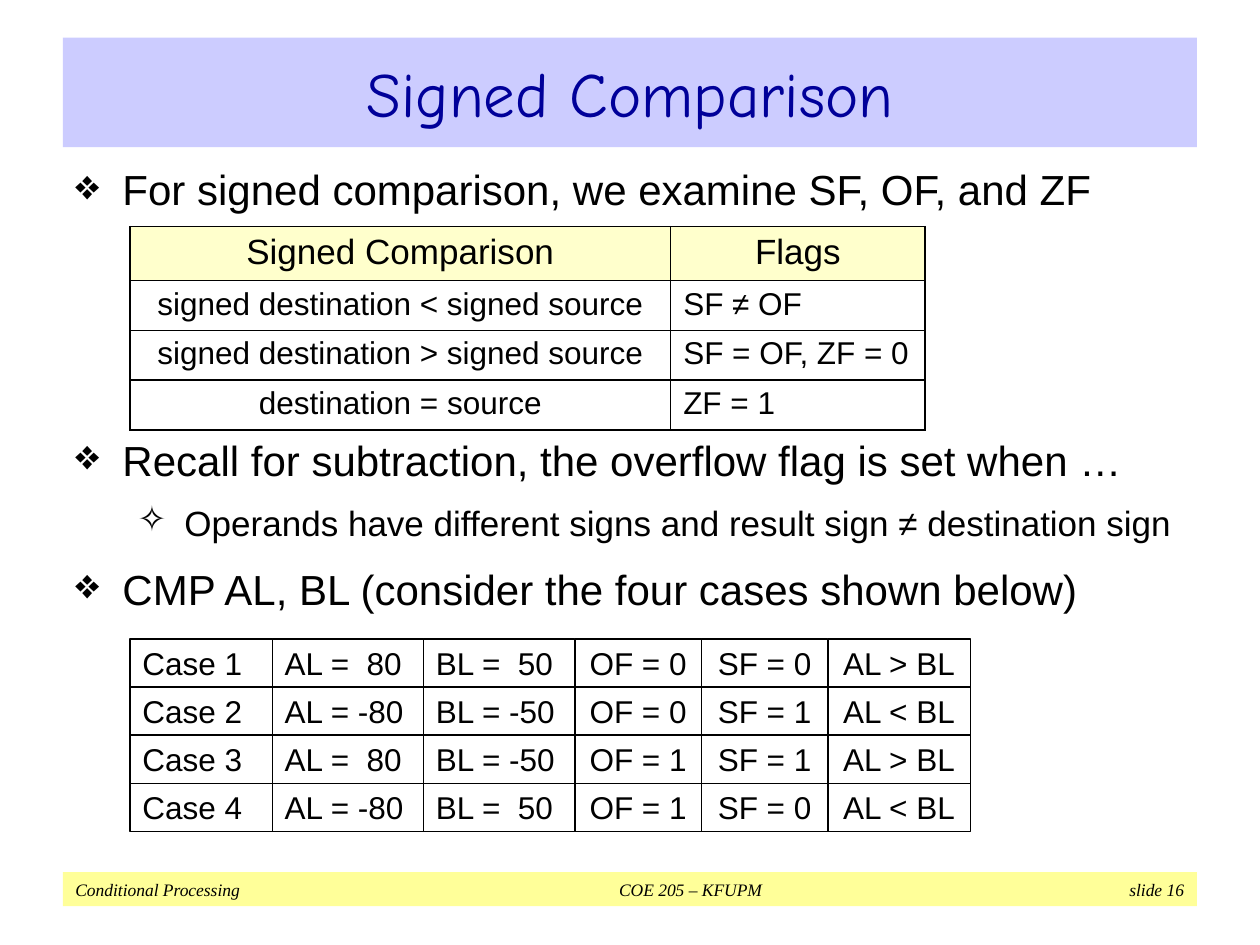
from lxml import etree
from pptx import Presentation
from pptx.dml.color import RGBColor
from pptx.enum.shapes import MSO_SHAPE
from pptx.enum.text import MSO_ANCHOR, PP_ALIGN
from pptx.oxml.ns import qn
from pptx.util import Cm, Pt

RECT = MSO_SHAPE.RECTANGLE
MIDDLE = MSO_ANCHOR.MIDDLE
LEFT, CENTER = PP_ALIGN.LEFT, PP_ALIGN.CENTER

THEME = {
    "ink": RGBColor(0, 0, 0),
    "band": RGBColor(0xCC, 0xCC, 0xFF),
    "foot": RGBColor(0xFF, 0xFF, 0x99),
    "head": RGBColor(0xFF, 0xFF, 0xCC),
    "title": {"name": "Comic Neue", "size": Pt(36)},
    "navy": RGBColor(0, 0, 0x99),
    "point": {"name": "Arial", "size": Pt(24)},
    "sub": {"name": "Arial", "size": Pt(20)},
    "cell": {"name": "Arial", "size": Pt(18)},
    "note": {"name": "Times New Roman", "size": Pt(10), "italic": True},
}


def write(para, text, style, align=LEFT, color="ink"):
    run = para.add_run()
    run.text = text
    para.alignment = align
    for key, value in THEME[style].items():
        setattr(run.font, key, value)
    run.font.color.rgb = THEME[color]


def add_box(left, top, width, height, fill=None):
    box = slide.shapes.add_shape(RECT, Cm(left), Cm(top), Cm(width), Cm(height))
    box.shadow.inherit = False
    if fill:
        box.fill.solid()
        box.fill.fore_color.rgb = THEME[fill]
        box.line.fill.background()
    else:
        box.fill.background()
        box.line.color.rgb = THEME["ink"]
        box.line.width = Pt(0.75)
    frame = box.text_frame
    frame.vertical_anchor = MIDDLE
    frame.margin_top = frame.margin_bottom = 0
    return frame.paragraphs[0]


deck = Presentation()
deck.slide_width, deck.slide_height = Cm(25.4), Cm(19.05)
slide = deck.slides.add_slide(deck.slide_layouts[6])

# Footer with a centre and a right tab stop
para = add_box(1.27, 17.58, 22.86, 0.69, "foot")
write(para, "Conditional Processing\tCOE 205 – KFUPM\tslide 16", "note")
tabs = etree.SubElement(para._p.get_or_add_pPr(), qn("a:tabLst"))
for pos, algn in ((12.4, "ctr"), (22.35, "r")):
    etree.SubElement(tabs, qn("a:tab"), pos=str(Cm(pos)), algn=algn)

# Title band
para = add_box(1.27, 0.76, 22.86, 2.21, "band")
write(para, "Signed Comparison", "title", CENTER, "navy")

# Bullet points: text, style, mark, left margin, hanging indent, space before
points = [
    ("For signed comparison, we examine SF, OF, and ZF", "point", "❖", 0.95, 0.95, 0),
    ("Recall for subtraction, the overflow flag is set when …",
     "point", "❖", 0.95, 0.95, 126),
    ("Operands have different signs and result sign ≠ destination sign",
     "sub", "✧", 2.2, 0.95, 9.5),
    ("CMP AL, BL (consider the four cases shown below)", "point", "❖", 0.95, 0.95, 11),
]
body = slide.shapes.add_textbox(Cm(1.27), Cm(3.18), Cm(22.86), Cm(14.27)).text_frame
body.word_wrap = True
for i, (text, style, mark, margin, hang, gap) in enumerate(points):
    para = body.add_paragraph() if i else body.paragraphs[0]
    write(para, text, style)
    para.space_before = Pt(gap)
    para.level = 1 if style == "sub" else 0
    props = para._p.get_or_add_pPr()
    props.set("marL", str(Cm(margin)))
    props.set("indent", str(-Cm(hang)))
    etree.SubElement(props, qn("a:buChar"), char=mark)

# Table of flags
flags = [
    ("Signed Comparison", "Flags"),
    ("signed destination < signed source", "SF ≠ OF"),
    ("signed destination > signed source", "SF = OF, ZF = 0"),
    ("destination = source", "ZF = 1"),
]
table = slide.shapes.add_table(4, 2, Cm(2.62), Cm(4.57), Cm(16.03), Cm(3.96)).table
table.first_row = table.horz_banding = False
for col, width in zip(table.columns, (10.9, 5.13)):
    col.width = Cm(width)
for r, row in enumerate(flags):
    table.rows[r].height = Cm(0.97 if r else 1.05)
    for c, text in enumerate(row):
        cell = table.cell(r, c)
        cell.margin_top = cell.margin_bottom = Cm(0.12)
        align = LEFT if r and c else CENTER
        write(cell.text_frame.paragraphs[0], text, "cell" if r else "sub", align)
        props = cell._tc.get_or_add_tcPr()
        for side in ("a:lnL", "a:lnR", "a:lnT", "a:lnB"):
            line = etree.SubElement(props, qn(side), w=str(Pt(1)))
            solid = etree.SubElement(line, qn("a:solidFill"))
            etree.SubElement(solid, qn("a:srgbClr"), val=str(THEME["ink"]))
        if r:
            cell.fill.background()
        else:
            cell.fill.solid()
            cell.fill.fore_color.rgb = THEME["head"]

# Grid of the four cases
cases = [
    ("Case 1", "AL =  80", "BL =  50", "OF = 0", "SF = 0", "AL > BL"),
    ("Case 2", "AL = -80", "BL = -50", "OF = 0", "SF = 1", "AL < BL"),
    ("Case 3", "AL =  80", "BL = -50", "OF = 1", "SF = 1", "AL > BL"),
    ("Case 4", "AL = -80", "BL =  50", "OF = 1", "SF = 0", "AL < BL"),
]
widths = (2.87, 3.05, 3.05, 2.55, 2.55, 2.87)
high = 0.97
for r, row in enumerate(cases):
    left = 2.62
    for c, (text, width) in enumerate(zip(row, widths)):
        para = add_box(left, 12.88 + r * high, width, high)
        write(para, text, "cell", LEFT if c < 3 else CENTER)
        left += width

deck.save("out.pptx")
